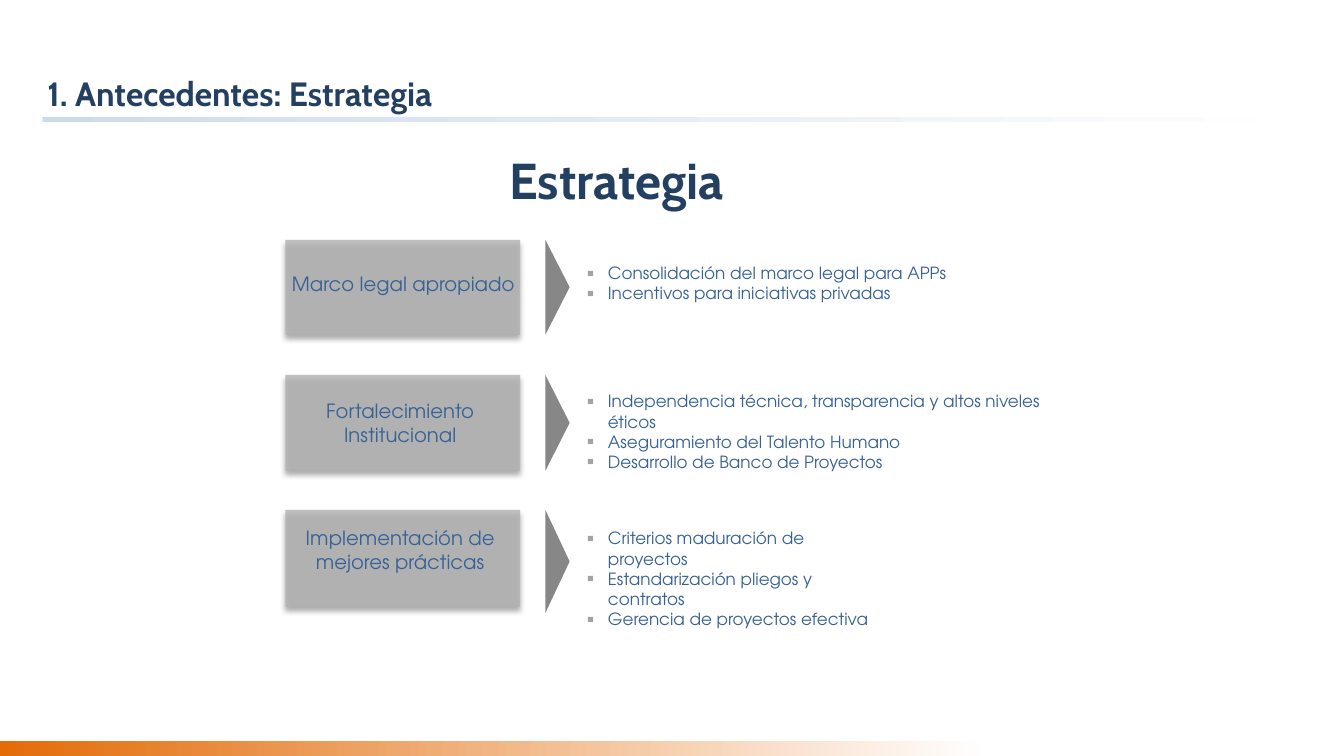
"""Build the strategy slide: three pillars, each with an arrow and its bullet list."""
from lxml.etree import SubElement
from pptx import Presentation
from pptx.dml.color import RGBColor
from pptx.enum.shapes import MSO_SHAPE
from pptx.enum.text import MSO_ANCHOR, MSO_AUTO_SIZE, PP_ALIGN
from pptx.oxml.ns import qn
from pptx.util import Inches, Pt

SLIDE_TITLE = "1. Antecedentes: Estrategia"
HEADING = "Estrategia"
PILLARS = [
    {"label": "Marco legal apropiado",
     "points": ["Consolidación del marco legal para APPs",
                "Incentivos para iniciativas privadas"],
     "label_box": (0.32, 2.22, 0.23), "points_box": (0.23, 5.02, 0.4),
     "card_height": 0.94, "arrow_height": 0.94},
    {"label": "Fortalecimiento Institucional",
     "points": ["Independencia técnica, transparencia y altos niveles éticos",
                "Aseguramiento del Talento Humano",
                "Desarrollo de Banco de Proyectos"],
     "label_box": (0.24, 2.16, 0.47), "points_box": (0.16, 5.02, 0.61),
     "card_height": 0.95, "arrow_height": 0.95},
    {"label": "Implementación de mejores prácticas",
     "points": ["Criterios maduración de proyectos",
                "Estandarización pliegos y contratos",
                "Gerencia de proyectos efectiva"],
     "label_box": (0.16, 2.16, 0.47), "points_box": (0.18, 2.89, 0.61),
     "card_height": 0.96, "arrow_height": 1.02},
]
COLORS = {"navy": "244061", "text": "386295", "bullet": "A3A3A3", "card": "B2B2B2",
          "arrow": "5F5F5F", "rule": "CCDBEC", "orange": "E36C09", "white": "FFFFFF",
          "shadow": "000000"}
HEAD_FONT, BODY_FONT = "Cabin", "TeX Gyre Adventor"
WIDTH, HEIGHT = 13.33, 7.5
ROW_TOP, ROW_PITCH = 2.38, 1.34
CARD_LEFT, LABEL_LEFT, ARROW_LEFT, POINTS_LEFT = 2.83, 2.89, 5.41, 5.81
CARD_WIDTH, ARROW_WIDTH = 2.33, 0.24


def color(name):
    return RGBColor.from_string(COLORS[name])


def add_bullet(para):
    properties = para._p.get_or_add_pPr()
    properties.set("marL", str(Inches(0.22)))
    properties.set("indent", str(Inches(-0.21)))
    bullet_color = SubElement(properties, qn("a:buClr"))
    SubElement(bullet_color, qn("a:srgbClr"), val=COLORS["bullet"])
    SubElement(properties, qn("a:buSzPct"), val="125000")
    SubElement(properties, qn("a:buFont"), typeface="Arial")
    SubElement(properties, qn("a:buChar"), char="▪")


def add_text(page, lines, place, size=12, font=BODY_FONT, fill="text", bold=False,
             align=PP_ALIGN.LEFT, anchor=MSO_ANCHOR.TOP, bullets=False, grow=True):
    box = page.shapes.add_textbox(*map(Inches, place))
    frame = box.text_frame
    frame.word_wrap = True
    frame.auto_size = MSO_AUTO_SIZE.SHAPE_TO_FIT_TEXT if grow else MSO_AUTO_SIZE.NONE
    frame.vertical_anchor = anchor
    frame.margin_left = frame.margin_right = frame.margin_top = frame.margin_bottom = 0
    for index, line in enumerate(lines):
        para = frame.add_paragraph() if index else frame.paragraphs[0]
        para.alignment = align
        if bullets:
            para.level = 1
            add_bullet(para)
        span = para.add_run()
        span.text = line
        span.font.name, span.font.size, span.font.bold = font, Pt(size), bold
        span.font.color.rgb = color(fill)


def add_plain_shape(page, kind, place):
    shape = page.shapes.add_shape(kind, *map(Inches, place))
    shape.shadow.inherit = False
    shape.line.fill.background()
    return shape


def add_fading_bar(page, place, start):
    bar = add_plain_shape(page, MSO_SHAPE.RECTANGLE, place)
    bar.fill.gradient()
    bar.fill.gradient_angle = 0
    for stop, name in zip(bar.fill.gradient_stops, (start, "white")):
        stop.color.rgb = color(name)


def add_translucent(page, kind, place, name, opacity):
    shape = add_plain_shape(page, kind, place)
    shape.fill.solid()
    shape.fill.fore_color.rgb = color(name)
    tint = shape._element.spPr.find(qn("a:solidFill")).find(qn("a:srgbClr"))
    SubElement(tint, qn("a:alpha"), val=str(opacity * 1000))
    return shape


def add_drop_shadow(shape):
    effects = shape._element.spPr.find(qn("a:effectLst"))
    shadow = SubElement(effects, qn("a:outerShdw"), blurRad=str(Pt(4)), dist=str(Pt(3)),
                        dir="5400000", rotWithShape="0")
    tint = SubElement(shadow, qn("a:srgbClr"), val=COLORS["shadow"])
    SubElement(tint, qn("a:alpha"), val="40000")


def add_pillar(page, pillar, top):
    card = add_translucent(page, MSO_SHAPE.RECTANGLE,
                           (CARD_LEFT, top, CARD_WIDTH, pillar["card_height"]), "card", 80)
    add_drop_shadow(card)
    arrow = add_translucent(page, MSO_SHAPE.RIGHT_ARROW,
                            (ARROW_LEFT, top, ARROW_WIDTH, pillar["arrow_height"]), "arrow", 75)
    arrow.adjustments[0], arrow.adjustments[1] = 0.55, 1
    offset, width, height = pillar["points_box"]
    add_text(page, pillar["points"], (POINTS_LEFT, top + offset, width, height), bullets=True)
    offset, width, height = pillar["label_box"]
    add_text(page, [pillar["label"]], (LABEL_LEFT, top + offset, width, height), size=14,
             align=PP_ALIGN.CENTER, anchor=MSO_ANCHOR.MIDDLE)


def main():
    deck = Presentation()
    deck.slide_width, deck.slide_height = Inches(WIDTH), Inches(HEIGHT)
    page = deck.slides.add_slide(deck.slide_layouts[6])
    add_fading_bar(page, (0.42, 1.16, 12.53, 0.05), "rule")
    add_fading_bar(page, (0, HEIGHT - 0.15, 9.8, 0.15), "orange")
    headline = {"font": HEAD_FONT, "fill": "navy", "bold": True, "anchor": MSO_ANCHOR.BOTTOM}
    add_text(page, [SLIDE_TITLE], (0.47, 0.3, 9.4, 0.82), size=24, grow=False, **headline)
    add_text(page, [HEADING], (5.05, 1.47, 4.02, 0.61), size=36, **headline)
    for row, pillar in enumerate(PILLARS):
        add_pillar(page, pillar, ROW_TOP + row * ROW_PITCH)
    deck.save("out.pptx")


if __name__ == "__main__":
    main()
